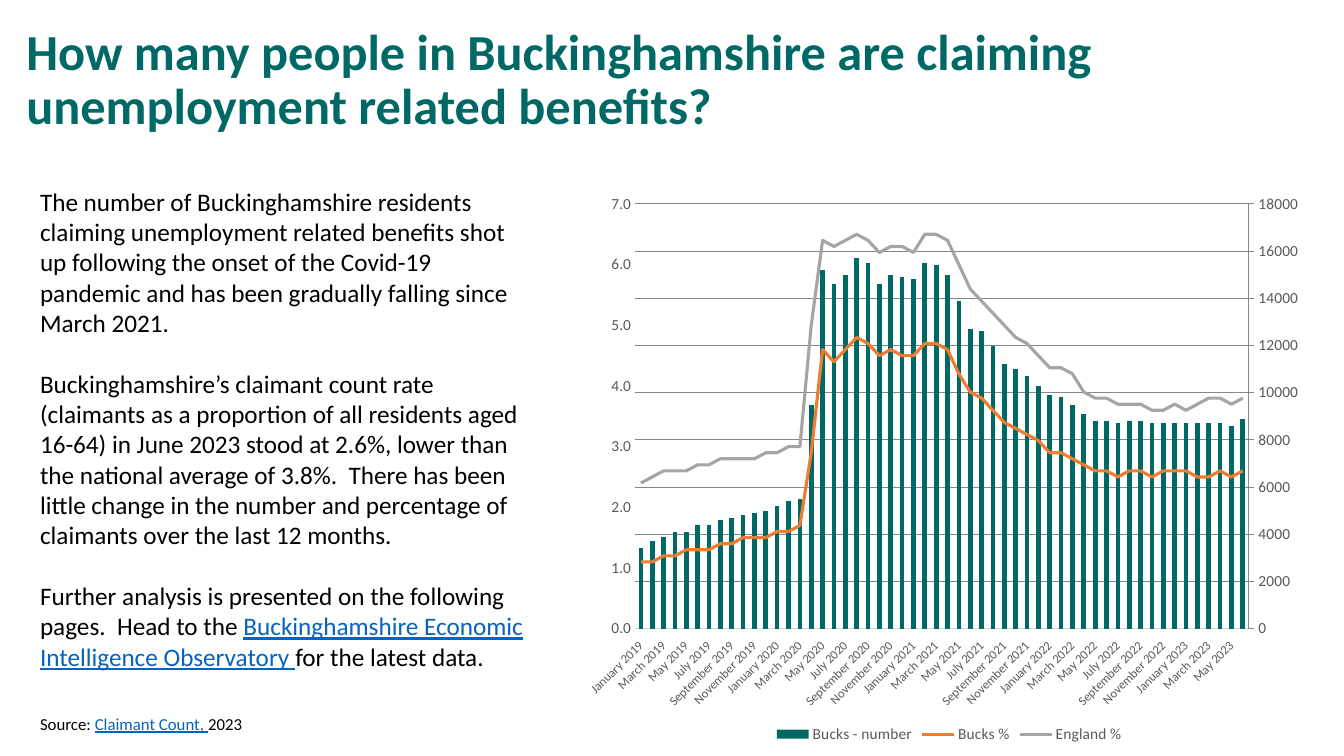
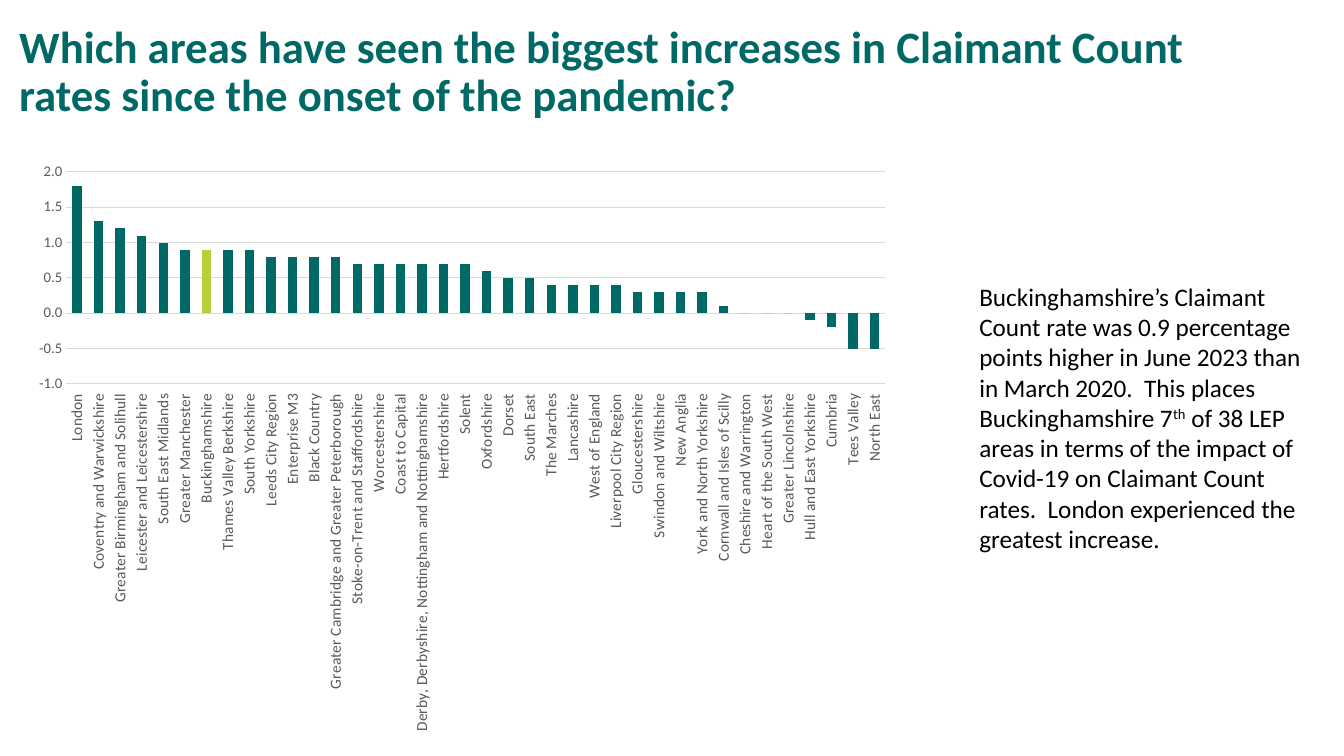
"""Builds two slides on claimant counts in Buckinghamshire."""
from copy import deepcopy
from itertools import product

from lxml.etree import SubElement
from pptx import Presentation
from pptx.chart.axis import ValueAxis
from pptx.chart.data import CategoryChartData
from pptx.dml.color import RGBColor
from pptx.enum.chart import XL_CHART_TYPE as ChartType
from pptx.enum.chart import XL_LEGEND_POSITION as LegendPosition
from pptx.enum.chart import XL_MARKER_STYLE as MarkerStyle
from pptx.enum.chart import XL_TICK_LABEL_POSITION as LabelPosition
from pptx.enum.chart import XL_TICK_MARK as TickMark
from pptx.enum.text import MSO_ANCHOR, MSO_AUTO_SIZE, PP_ALIGN
from pptx.oxml import parse_xml
from pptx.oxml.ns import nsdecls, qn
from pptx.util import Cm, Pt

FONT = "Calibri"
COLORS = {
    "teal": "006965", "lime": "B5D137", "orange": "ED7D31", "silver": "A5A5A5",
    "text": "000000", "link": "0563C1", "label": "595959", "grid": "D9D9D9",
}

TREND_TITLE = "How many people in Buckinghamshire are claiming unemployment related benefits?"
TREND_TEXT = [
    [("The number of Buckinghamshire residents claiming unemployment related benefits shot up "
      "following the onset of the Covid-19 pandemic and has been gradually falling since "
      "March 2021.", "plain")],
    [("Buckinghamshire’s claimant count rate (claimants as a proportion of all residents aged "
      "16-64) in June 2023 stood at 2.6%, lower than the national average of 3.8%.  There has "
      "been little change in the number and percentage of claimants over the last 12 months.",
      "plain")],
    [("Further analysis is presented on the following pages.  Head to the ", "plain"),
     ("Buckinghamshire Economic Intelligence Observatory ", "link"),
     ("for the latest data.", "plain")],
]
TREND_SOURCE = [[("Source: ", "plain"), ("Claimant Count, ", "link"), ("2023", "plain")]]

MONTH_NAMES = ["January", "February", "March", "April", "May", "June", "July", "August",
               "September", "October", "November", "December"]
MONTHS = [f"{month} {year}" for year, month in product(range(2019, 2024), MONTH_NAMES)][:54]
TREND_SERIES = {
    "Bucks - number": [
        3400, 3700, 3900, 4100, 4100, 4400, 4400, 4600, 4700, 4800, 4900, 5000,
        5200, 5400, 5500, 9500, 15200, 14600, 15000, 15700, 15500, 14600, 15000, 14900,
        14800, 15500, 15400, 15000, 13900, 12700, 12600, 12000, 11200, 11000, 10700, 10300,
        9900, 9800, 9500, 9100, 8800, 8800, 8700, 8800, 8800, 8700, 8700, 8700,
        8700, 8700, 8700, 8700, 8600, 8900],
    "Bucks %": [
        1.1, 1.1, 1.2, 1.2, 1.3, 1.3, 1.3, 1.4, 1.4, 1.5, 1.5, 1.5,
        1.6, 1.6, 1.7, 2.9, 4.6, 4.4, 4.6, 4.8, 4.7, 4.5, 4.6, 4.5,
        4.5, 4.7, 4.7, 4.6, 4.2, 3.9, 3.8, 3.6, 3.4, 3.3, 3.2, 3.1,
        2.9, 2.9, 2.8, 2.7, 2.6, 2.6, 2.5, 2.6, 2.6, 2.5, 2.6, 2.6,
        2.6, 2.5, 2.5, 2.6, 2.5, 2.6],
    "England %": [
        2.4, 2.5, 2.6, 2.6, 2.6, 2.7, 2.7, 2.8, 2.8, 2.8, 2.8, 2.9,
        2.9, 3, 3, 5, 6.4, 6.3, 6.4, 6.5, 6.4, 6.2, 6.3, 6.3,
        6.2, 6.5, 6.5, 6.4, 6, 5.6, 5.4, 5.2, 5, 4.8, 4.7, 4.5,
        4.3, 4.3, 4.2, 3.9, 3.8, 3.8, 3.7, 3.7, 3.7, 3.6, 3.6, 3.7,
        3.6, 3.7, 3.8, 3.8, 3.7, 3.8],
}

AREAS_TITLE = ("Which areas have seen the biggest increases in Claimant Count rates "
               "since the onset of the pandemic?")
AREAS_TEXT = [[
    ("Buckinghamshire’s Claimant Count rate was 0.9 percentage points higher in June 2023 than "
     "in March 2020.  This places Buckinghamshire 7", "plain"),
    ("th", "superscript"),
    (" of 38 LEP areas in terms of the impact of Covid-19 on Claimant Count rates.  London "
     "experienced the greatest increase.", "plain"),
]]
HIGHLIGHT = "Buckinghamshire"
AREA_CHANGES = [
    ("London", 1.8), ("Coventry and Warwickshire", 1.3),
    ("Greater Birmingham and Solihull", 1.2), ("Leicester and Leicestershire", 1.1),
    ("South East Midlands", 1), ("Greater Manchester", 0.9), (HIGHLIGHT, 0.9),
    ("Thames Valley Berkshire", 0.9), ("South Yorkshire", 0.9), ("Leeds City Region", 0.8),
    ("Enterprise M3", 0.8), ("Black Country", 0.8),
    ("Greater Cambridge and Greater Peterborough", 0.8),
    ("Stoke-on-Trent and Staffordshire", 0.7), ("Worcestershire", 0.7),
    ("Coast to Capital", 0.7), ("Derby, Derbyshire, Nottingham and Nottinghamshire", 0.7),
    ("Hertfordshire", 0.7), ("Solent", 0.7), ("Oxfordshire", 0.6), ("Dorset", 0.5),
    ("South East", 0.5), ("The Marches", 0.4), ("Lancashire", 0.4), ("West of England", 0.4),
    ("Liverpool City Region", 0.4), ("Gloucestershire", 0.3), ("Swindon and Wiltshire", 0.3),
    ("New Anglia", 0.3), ("York and North Yorkshire", 0.3),
    ("Cornwall and Isles of Scilly", 0.1), ("Cheshire and Warrington", 0),
    ("Heart of the South West", 0), ("Greater Lincolnshire", 0),
    ("Hull and East Yorkshire", -0.1), ("Cumbria", -0.2), ("Tees Valley", -0.5),
    ("North East", -0.5),
]


def rgb(name):
    return RGBColor.from_string(COLORS[name])


def set_font(font, size, color):
    font.name, font.size, font.color.rgb = FONT, Pt(size), rgb(color)


def place(shape, box):
    shape.left, shape.top, shape.width, shape.height = map(Cm, box)


def add_titled_slide(deck, text, box, size):
    slide = deck.slides.add_slide(deck.slide_layouts[5])
    title = slide.shapes.title
    place(title, box)
    frame = title.text_frame
    frame.auto_size, frame.vertical_anchor = MSO_AUTO_SIZE.NONE, MSO_ANCHOR.MIDDLE
    paragraph = frame.paragraphs[0]
    paragraph.alignment, paragraph.line_spacing = PP_ALIGN.LEFT, 0.9
    run = paragraph.add_run()
    run.text = text
    set_font(run.font, size, "teal")
    run.font.bold = True
    return slide


def add_text(slide, paragraphs, box, size):
    frame = slide.shapes.add_textbox(*map(Cm, box)).text_frame
    frame.word_wrap = True
    for index, runs in enumerate(paragraphs):
        paragraph = frame.paragraphs[0]
        if index:
            paragraph = frame.add_paragraph()
            paragraph.space_before = Pt(22)
        for text, style in runs:
            run = paragraph.add_run()
            run.text = text
            set_font(run.font, size, "link" if style == "link" else "text")
            if style == "link":
                run.font.underline = True
            if style == "superscript":
                run.font._element.set("baseline", "30000")


def fill_solid(item, color):
    item.format.fill.solid()
    item.format.fill.fore_color.rgb = rgb(color)


def set_plot_box(chart, plot_box):
    plot_area = chart._chartSpace.chart.plotArea
    for old in plot_area.findall(qn("c:layout")):
        plot_area.remove(old)
    layout = parse_xml(f"<c:layout {nsdecls('c')}/>")
    manual = SubElement(layout, qn("c:manualLayout"))
    settings = [("layoutTarget", "inner"), ("xMode", "edge"), ("yMode", "edge"),
                *zip("xywh", map(str, plot_box))]
    for tag, value in settings:
        SubElement(manual, qn(f"c:{tag}")).set("val", value)
    plot_area.insert(0, layout)


def add_columns(slide, categories, series, box, plot_box, gap):
    data = CategoryChartData()
    data.categories = categories
    for name, values in series.items():
        data.add_series(name, values)
    chart = slide.shapes.add_chart(ChartType.COLUMN_CLUSTERED, *map(Cm, box), data).chart
    set_font(chart.font, 11, "label")
    chart.has_title = chart.has_legend = False
    columns = chart.plots[0]
    columns.gap_width, columns.overlap, columns.vary_by_categories = gap, -27, False
    fill_solid(columns.series[0], "teal")
    set_plot_box(chart, plot_box)
    return chart


def style_category_axis(axis, size, degrees):
    axis.major_tick_mark = TickMark.NONE
    axis.tick_label_position = LabelPosition.LOW
    axis.format.line.color.rgb = rgb("grid")
    axis.format.line.width = Pt(0.75)
    set_font(axis.tick_labels.font, size, "label")
    axis._element.find(qn("c:txPr")).find(qn("a:bodyPr")).set("rot", str(-degrees * 60000))


def style_value_axis(axis, low, high, step, number_format, size, grid=True):
    axis.minimum_scale, axis.maximum_scale, axis.major_unit = low, high, step
    axis.major_tick_mark = TickMark.NONE
    axis.format.line.fill.background()
    set_font(axis.tick_labels.font, size, "label")
    axis.tick_labels.number_format = number_format
    axis.tick_labels.number_format_is_linked = False
    axis.has_major_gridlines = grid
    if grid:
        axis.major_gridlines.format.line.color.rgb = rgb("grid")
        axis.major_gridlines.format.line.width = Pt(0.75)


def split_off_lines(chart):
    """Move all series but the first to a line plot and return its own value axis."""
    bars = chart.plots[0]._element
    lines = parse_xml(f'<c:lineChart {nsdecls("c")}><c:grouping val="standard"/>'
                      '<c:varyColors val="0"/></c:lineChart>')
    for series in bars.findall(qn("c:ser"))[1:]:
        for bar_setting in series.findall(qn("c:invertIfNegative")):
            series.remove(bar_setting)
        lines.append(series)
    SubElement(lines, qn("c:marker")).set("val", "1")
    bars.addnext(lines)

    new_ids = {}
    for number, old in enumerate(bars.findall(qn("c:axId")), 1):
        new_ids[old.get("val")] = str(5000 + number)
        SubElement(lines, qn("c:axId")).set("val", new_ids[old.get("val")])
    category, value = chart.category_axis._element, chart.value_axis._element
    category_copy, value_copy = deepcopy(category), deepcopy(value)
    for axis in (category_copy, value_copy):
        for tag in ("c:axId", "c:crossAx"):
            item = axis.find(qn(tag))
            item.set("val", new_ids[item.get("val")])
    value.addnext(value_copy)
    value_copy.addnext(category_copy)
    ValueAxis(category_copy).visible = False
    value.find(qn("c:axPos")).set("val", "r")
    value.find(qn("c:crosses")).set("val", "max")
    return ValueAxis(value_copy)


def build_trend_slide(deck):
    slide = add_titled_slide(deck, TREND_TITLE, (0.41, 0.2, 29.21, 3.68), 36)
    chart = add_columns(slide, MONTHS, TREND_SERIES, (14.5, 4.57, 18.85, 14.27),
                        (0.08, 0.04, 0.82, 0.75), 142)
    style_category_axis(chart.category_axis, 9, 45)
    skip = parse_xml(f'<c:tickLblSkip {nsdecls("c")} val="2"/>')
    chart.category_axis._element.find(qn("c:noMultiLvlLbl")).addprevious(skip)
    rate_axis = split_off_lines(chart)
    style_value_axis(chart.value_axis, 0, 18000, 2000, "#,##0", 11, grid=False)
    style_value_axis(rate_axis, 0, 7, 1, "0.0", 11)
    for series, color in zip(chart.plots[1].series, ("orange", "silver")):
        series.smooth = False
        series.marker.style = MarkerStyle.NONE
        series.format.line.color.rgb = rgb(color)
        series.format.line.width = Pt(2.25)
    chart.has_legend = True
    chart.legend.position = LegendPosition.BOTTOM
    chart.legend.include_in_layout = False
    set_font(chart.legend.font, 11, "label")
    add_text(slide, TREND_TEXT, (0.76, 4.57, 12.9, 12.57), 18)
    add_text(slide, TREND_SOURCE, (0.76, 17.86, 11.56, 0.76), 12)


def build_areas_slide(deck):
    slide = add_titled_slide(deck, AREAS_TITLE, (0.23, 0, 31.22, 3.68), 32)
    areas, changes = zip(*AREA_CHANGES)
    chart = add_columns(slide, areas, {"Series 1": changes}, (0.56, 3.89, 22.2, 14.83),
                        (0.05, 0.03, 0.93, 0.36), 128)
    style_category_axis(chart.category_axis, 11, 90)
    style_value_axis(chart.value_axis, -1, 2, 0.5, "#,##0.0", 10.5)
    changes_series = chart.plots[0].series[0]
    changes_series.invert_if_negative = False
    fill_solid(changes_series.points[areas.index(HIGHLIGHT)], "lime")
    add_text(slide, AREAS_TEXT, (24.43, 6.96, 8.86, 7.19), 18)


def main():
    deck = Presentation()
    deck.slide_width, deck.slide_height = Cm(33.87), Cm(19.05)
    build_trend_slide(deck)
    build_areas_slide(deck)
    deck.save("out.pptx")


if __name__ == "__main__":
    main()
